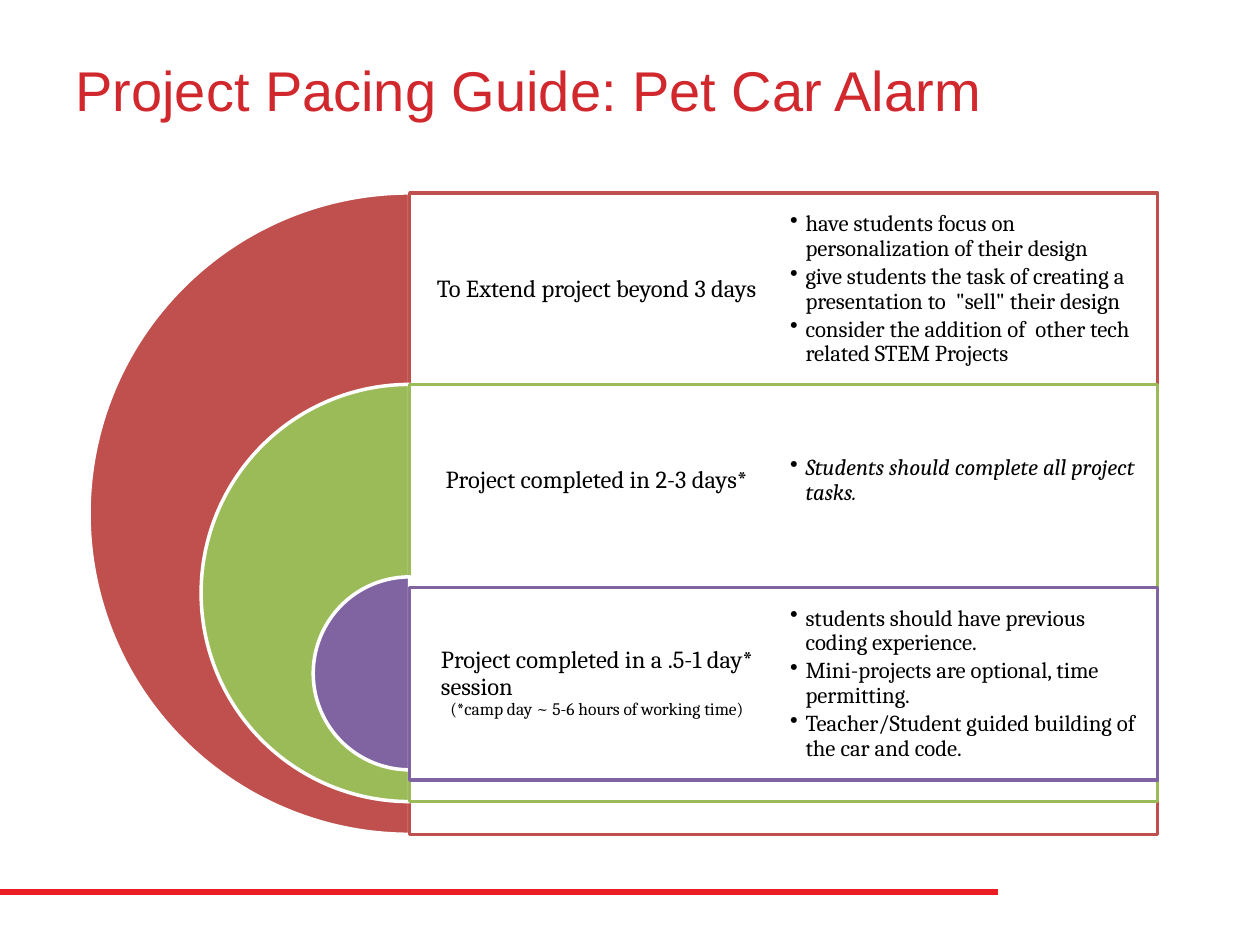
from lxml import etree
from pptx import Presentation
from pptx.dml.color import RGBColor
from pptx.enum.shapes import MSO_CONNECTOR, MSO_SHAPE
from pptx.enum.text import MSO_ANCHOR, PP_ALIGN
from pptx.oxml.ns import qn
from pptx.util import Cm, Pt

PIE, RECT = MSO_SHAPE.PIE, MSO_SHAPE.RECTANGLE
STRAIGHT = MSO_CONNECTOR.STRAIGHT
MIDDLE = MSO_ANCHOR.MIDDLE
LEFT, CENTER = PP_ALIGN.LEFT, PP_ALIGN.CENTER

COLORS = {
    "title": "D1282E", "rule": "ED1D24", "text": "000000", "white": "FFFFFF",
    "red": "C0504D", "green": "9BBB59", "purple": "8064A2",
}
TITLE = {"name": "Arial", "size": Pt(32)}
LABEL = {"name": "Cambria", "size": Pt(14)}
NOTE = {"name": "Cambria", "size": Pt(10)}
BULLET = {"name": "Cambria", "size": Pt(13)}
ITALIC = {**BULLET, "italic": True}

AXIS, PANEL_W, ROW_H = 8.26, 15.08, 3.89
COLUMN_W = PANEL_W / 2

STAGES = [
    {"color": "red", "ring": (3.89, 12.93), "panel": (3.89, 12.93),
     "label": [("To Extend project beyond 3 days", LABEL, CENTER, 0)],
     "style": BULLET,
     "bullets": ["have students focus on personalization of their design",
                 'give students the task of creating a presentation to  "sell" their design',
                 "consider the addition of  other tech related STEM Projects"]},
    {"color": "green", "ring": (7.75, 8.41), "panel": (7.75, 8.41),
     "label": [("Project completed in 2-3 days*", LABEL, CENTER, 0)],
     "style": ITALIC,
     "bullets": ["Students should complete all project tasks."]},
    {"color": "purple", "ring": (11.63, 3.89), "panel": (11.84, 3.89),
     "label": [("Project completed in a .5-1 day* session", LABEL, LEFT, 0.48),
               ("(*camp day ~ 5-6 hours of working time)", NOTE, CENTER, 0)],
     "style": BULLET,
     "bullets": ["students should have previous coding experience.",
                 "Mini-projects are optional, time permitting.",
                 "Teacher/Student guided building of the car and code."]},
]


def rgb(name):
    return RGBColor.from_string(COLORS[name])


class Deck:
    def __init__(self, slide, line_width):
        self.s = slide
        self.line_width = line_width

    def shape(self, kind, x, y, w, h, fill, line):
        sp = self.s.shapes.add_shape(kind, Cm(x), Cm(y), Cm(w), Cm(h))
        sp.shadow.inherit = False
        sp.fill.solid()
        sp.fill.fore_color.rgb = rgb(fill)
        sp.line.color.rgb = rgb(line)
        sp.line.width = self.line_width
        return sp

    def ring(self, top, size, color):
        sp = self.shape(PIE, AXIS - size / 2, top, size, size, color, "white")
        sp.adjustments[0], sp.adjustments[1] = 54, 162

    def panel(self, top, height, color):
        sp = self.shape(RECT, AXIS, top, PANEL_W, height, "white", color)
        fill = sp._element.spPr.find(qn("a:solidFill"))
        etree.SubElement(fill[0], qn("a:alpha"), val="90000")

    def rule(self, x, y, end, color):
        c = self.s.shapes.add_connector(STRAIGHT, Cm(x), Cm(y), Cm(end), Cm(y))
        c.line.color.rgb = rgb(color)
        c.line.width = Pt(3)
        etree.SubElement(c._element.spPr, qn("a:effectLst"))

    def frame(self, x, y, w, h, inset):
        tf = self.s.shapes.add_textbox(Cm(x), Cm(y), Cm(w), Cm(h)).text_frame
        tf.word_wrap = True
        tf.vertical_anchor = MIDDLE
        for side in ("left", "right", "top", "bottom"):
            setattr(tf, f"margin_{side}", Cm(inset))
        return tf

    def paragraph(self, tf, first, text, style, color="text"):
        p = tf.paragraphs[0] if first else tf.add_paragraph()
        r = p.add_run()
        r.text = text
        for key, value in style.items():
            setattr(r.font, key, value)
        r.font.color.rgb = rgb(color)
        return p

    def title(self, text):
        tf = self.frame(1.27, 0.2, 22.86, 3.18, 0.25)
        self.paragraph(tf, True, text, TITLE, "title")

    def label(self, top, lines):
        tf = self.frame(AXIS, top, COLUMN_W, ROW_H, 0.15)
        for i, (text, style, align, indent) in enumerate(lines):
            p = self.paragraph(tf, i == 0, text, style)
            p.alignment = align
            p.line_spacing = 0.9
            p._p.get_or_add_pPr().set("marL", str(Cm(indent)))

    def bullets(self, top, items, style):
        tf = self.frame(AXIS + COLUMN_W, top, COLUMN_W, ROW_H, 0.13)
        for i, text in enumerate(items):
            p = self.paragraph(tf, i == 0, text, style)
            p.line_spacing = 0.9
            p.space_after = Pt(2)
            pPr = p._p.get_or_add_pPr()
            pPr.set("marL", str(Cm(0.31)))
            pPr.set("indent", str(-Cm(0.31)))
            etree.SubElement(pPr, qn("a:buChar"), char="•")


def main():
    prs = Presentation()
    prs.slide_width, prs.slide_height = Cm(25.4), Cm(19.05)
    deck = Deck(prs.slides.add_slide(prs.slide_layouts[6]), Pt(2))
    deck.rule(0, 17.98, 20.12, "rule")
    deck.title("Project Pacing Guide: Pet Car Alarm")
    for stage in STAGES:
        top = stage["panel"][0]
        deck.ring(*stage["ring"], stage["color"])
        deck.panel(*stage["panel"], stage["color"])
        deck.label(top, stage["label"])
        deck.bullets(top, stage["bullets"], stage["style"])
    prs.save("out.pptx")


if __name__ == "__main__":
    main()
